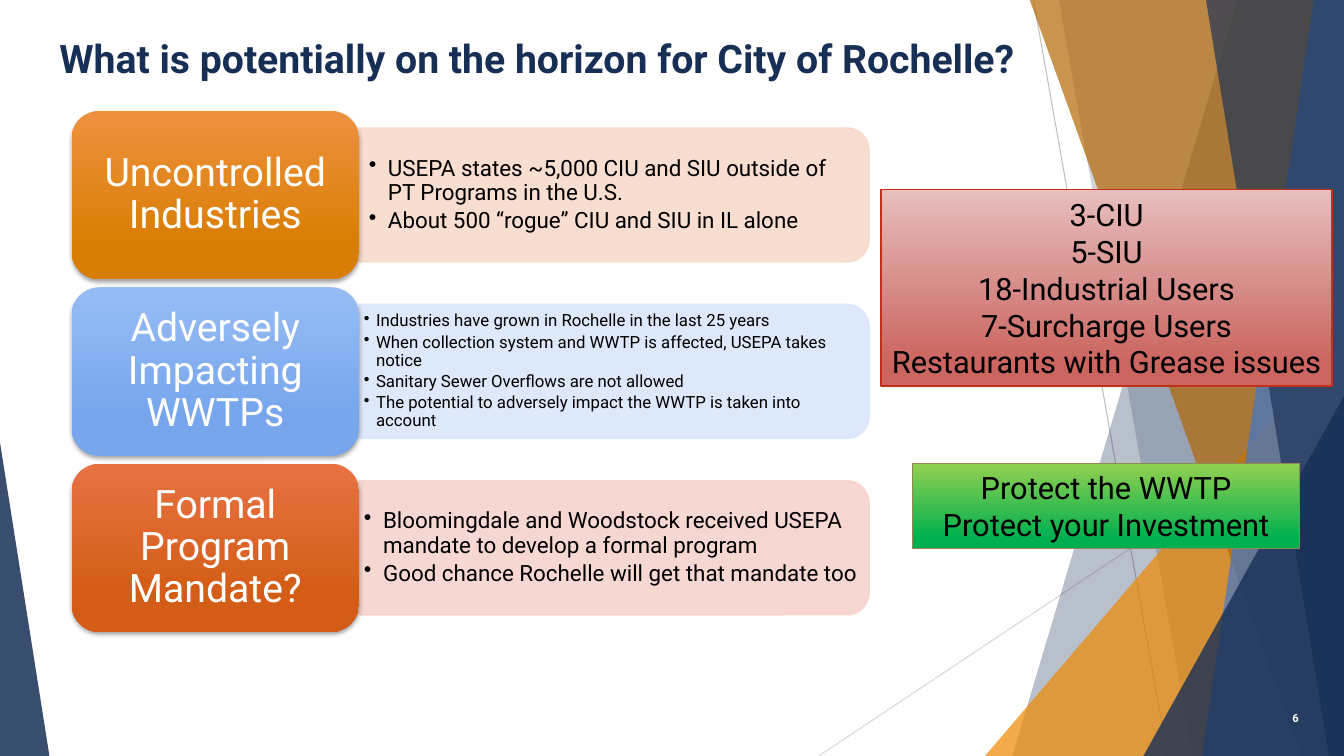
from dataclasses import dataclass

from lxml import etree
from pptx import Presentation
from pptx.dml.color import RGBColor
from pptx.enum import shapes, text
from pptx.oxml.ns import qn
from pptx.util import Inches, Pt

FONT = "Roboto"
NAVY = RGBColor(0x17, 0x2F, 0x55)
ORANGE = RGBColor(0xED, 0x8A, 0x05)
BROWN = RGBColor(0xB2, 0x67, 0x04)
BLUE = RGBColor(0x41, 0x77, 0xCC)
WHITE = RGBColor(0xFF, 0xFF, 0xFF)
BLACK = RGBColor(0x00, 0x00, 0x00)
GRAY = RGBColor(0xBF, 0xBF, 0xBF)
LIGHT_GRAY = RGBColor(0xD9, 0xD9, 0xD9)
AMBER_TOP, AMBER_BASE = RGBColor(0xEE, 0x91, 0x3F), RGBColor(0xD9, 0x7E, 0x05)
SKY_TOP, SKY_BASE = RGBColor(0x96, 0xBC, 0xF5), RGBColor(0x77, 0xA6, 0xEC)
RUST_TOP, RUST_BASE = RGBColor(0xE8, 0x72, 0x42), RGBColor(0xD3, 0x5D, 0x16)
PEACH = RGBColor(0xF8, 0xDA, 0xCC)
PALE_BLUE = RGBColor(0xDB, 0xE6, 0xFB)
PALE_RUST = RGBColor(0xF6, 0xD3, 0xCC)
ROSE_TOP, ROSE_BASE = RGBColor(0xE6, 0xBF, 0xBE), RGBColor(0xCB, 0x65, 0x60)
GREEN_TOP, GREEN_BASE = RGBColor(0x92, 0xD0, 0x50), RGBColor(0x00, 0xB0, 0x50)
RED_EDGE = RGBColor(0xC4, 0x2F, 0x1A)
OLIVE_EDGE = RGBColor(0x91, 0x86, 0x55)

SLIDE_W, SLIDE_H = 13.33, 7.5
ROW_TOP, ROW_PITCH = 1.10, 1.75
CARD_LEFT, CARD_W, CARD_H = 0.71, 2.85, 1.67
PANEL_W, PANEL_H = 5.06, 1.33
BULLETS_W, BULLETS_H = 5.0, 1.2


@dataclass
class Facet:
    """Band reaching the right edge, given by its left side."""
    top_x: float
    bottom_x: float
    color: RGBColor
    opacity: int


@dataclass
class Corner:
    """Triangle standing on the bottom edge."""
    left: float
    top: float
    width: float
    apex: float
    color: RGBColor
    opacity: int


@dataclass
class Topic:
    label: str
    bullets: list[str]
    size: int
    indent: float
    insets: tuple[float, float]
    top_color: RGBColor
    base_color: RGBColor
    panel_color: RGBColor


@dataclass
class Callout:
    box: tuple[float, float, float, float]
    lines: list[str]
    top_color: RGBColor
    base_color: RGBColor
    edge: RGBColor


BACKDROP = [
    Facet(12.28, 10.04, NAVY, 30),
    Facet(10.5, 11.83, NAVY, 20),
    Corner(9.77, 3.33, 3.56, 1, ORANGE, 72),
    Facet(10.21, 12.91, BROWN, 70),
    Facet(13.03, 11.92, BLUE, 70),
    Facet(11.96, 13.18, NAVY, 65),
    Corner(11.34, 3.93, 1.99, 1, NAVY, 80),
    Corner(0, 4.39, 0.49, 0, NAVY, 85),
]
TOPICS = [
    Topic("Uncontrolled Industries",
          ["USEPA states ~5,000 CIU and SIU outside of PT Programs in the U.S.",
           "About 500 “rogue” CIU and SIU in IL alone"],
          16, 0.19, (0.1, 0.05), AMBER_TOP, AMBER_BASE, PEACH),
    Topic("Adversely Impacting WWTPs",
          ["Industries have grown in Rochelle in the last 25 years",
           "When collection system and WWTP is affected, USEPA takes notice",
           "Sanitary Sewer Overflows are not allowed",
           "The potential to adversely impact the WWTP is taken into account"],
          12, 0.12, (0.05, 0.03), SKY_TOP, SKY_BASE, PALE_BLUE),
    Topic("Formal Program Mandate?",
          ["Bloomingdale and Woodstock received USEPA mandate to develop a formal program",
           "Good chance Rochelle will get that mandate too"],
          16, 0.19, (0.05, 0.03), RUST_TOP, RUST_BASE, PALE_RUST),
]
CALLOUTS = [
    Callout((8.74, 1.88, 4.47, 1.95),
            ["3-CIU", "5-SIU", "18-Industrial Users", "7-Surcharge Users",
             "Restaurants with Grease issues"], ROSE_TOP, ROSE_BASE, RED_EDGE),
    Callout((9.05, 4.6, 3.84, 0.84),
            ["Protect the WWTP", "Protect your Investment"],
            GREEN_TOP, GREEN_BASE, OLIVE_EDGE),
]


def paint(shape, color: RGBColor, opacity: int, outlined: bool = False) -> None:
    shape.shadow.inherit = False
    shape.fill.solid()
    shape.fill.fore_color.rgb = color
    if outlined:
        shape.line.color.rgb = color
        shape.line.width = Pt(1)
    else:
        shape.line.fill.background()
    for rgb in shape._element.spPr.iter(qn("a:srgbClr")):
        etree.SubElement(rgb, qn("a:alpha"), val=str(opacity * 1000))


def shade_down(shape, top_color: RGBColor, base_color: RGBColor, base_at: float) -> None:
    """Fill with a gradient running from top to bottom."""
    shape.shadow.inherit = False
    shape.fill.gradient()
    shape.fill.gradient_angle = 270
    stops = zip(shape.fill.gradient_stops, (top_color, base_color), (0, base_at))
    for stop, color, position in stops:
        stop.color.rgb = color
        stop.position = position


def drop_shadow(shape) -> None:
    effects = shape._element.spPr.find(qn("a:effectLst"))
    shadow = etree.SubElement(effects, qn("a:outerShdw"), blurRad=str(Pt(3)),
                              dist=str(Pt(2)), dir="5400000", rotWithShape="0")
    rgb = etree.SubElement(shadow, qn("a:srgbClr"), val="000000")
    etree.SubElement(rgb, qn("a:alpha"), val="35000")


def set_insets(frame, side: float, end: float) -> None:
    frame.margin_left = frame.margin_right = Inches(side)
    frame.margin_top = frame.margin_bottom = Inches(end)


def write(frame, lines: list[str], size: int, color: RGBColor,
          align=text.PP_ALIGN.LEFT, bold: bool = False) -> None:
    for i, line in enumerate(lines):
        paragraph = frame.add_paragraph() if i else frame.paragraphs[0]
        paragraph.alignment = align
        run = paragraph.add_run()
        run.text = line
        run.font.name, run.font.size, run.font.bold = FONT, Pt(size), bold
        run.font.color.rgb = color


def add_text_box(slide, left: float, top: float, width: float, height: float,
                 anchor=text.MSO_ANCHOR.MIDDLE):
    frame = slide.shapes.add_textbox(*map(Inches, (left, top, width, height))).text_frame
    frame.word_wrap = True
    frame.vertical_anchor = anchor
    return frame


def add_shape(slide, preset, left: float, top: float, width: float, height: float):
    return slide.shapes.add_shape(preset, *map(Inches, (left, top, width, height)))


def draw_ray(slide, start: tuple[float, float], end: tuple[float, float],
             color: RGBColor) -> None:
    ray = slide.shapes.add_connector(shapes.MSO_CONNECTOR.STRAIGHT,
                                     *map(Inches, start + end))
    ray.line.color.rgb = color
    ray.line.width = Pt(0.75)
    etree.SubElement(ray._element.spPr, qn("a:effectLst"))


def draw_facet(slide, facet: Facet) -> None:
    top = Inches(-0.01)
    right, bottom = Inches(SLIDE_W), Inches(SLIDE_H)
    outline = slide.shapes.build_freeform(Inches(facet.top_x), top)
    outline.add_line_segments([(right, top), (right, bottom),
                               (Inches(facet.bottom_x), bottom)])
    paint(outline.convert_to_shape(), facet.color, facet.opacity)


def draw_corner(slide, corner: Corner) -> None:
    triangle = add_shape(slide, shapes.MSO_SHAPE.ISOSCELES_TRIANGLE, corner.left,
                         corner.top, corner.width, SLIDE_H - corner.top)
    triangle.adjustments[0] = corner.apex
    paint(triangle, corner.color, corner.opacity)


def draw_topic(slide, topic: Topic, row: int) -> None:
    top = ROW_TOP + row * ROW_PITCH
    middle = top + CARD_H / 2
    card_right = CARD_LEFT + CARD_W
    panel = add_shape(slide, shapes.MSO_SHAPE.ROUND_2_SAME_RECTANGLE,
                      card_right + (PANEL_W - PANEL_H) / 2, middle - PANEL_W / 2,
                      PANEL_H, PANEL_W)
    panel.rotation = 90
    paint(panel, topic.panel_color, 90, outlined=True)

    details = add_text_box(slide, card_right, middle - BULLETS_H / 2, BULLETS_W, BULLETS_H)
    set_insets(details, *topic.insets)
    write(details, topic.bullets, topic.size, BLACK)
    for paragraph in details.paragraphs:
        paragraph.level = 1
        paragraph.line_spacing = 0.9
        paragraph.space_after = Pt(round(topic.size * 0.18, 1))
        properties = paragraph._p.get_or_add_pPr()
        properties.set("marL", str(Inches(topic.indent)))
        properties.set("indent", str(-Inches(topic.indent)))
        etree.SubElement(properties, qn("a:buChar"), char="•")

    card = add_shape(slide, shapes.MSO_SHAPE.ROUNDED_RECTANGLE,
                     CARD_LEFT, top, CARD_W, CARD_H)
    shade_down(card, topic.top_color, topic.base_color, 0.78)
    card.line.fill.background()
    drop_shadow(card)
    set_insets(card.text_frame, 0.12, 0.06)
    write(card.text_frame, [topic.label], 28, WHITE, text.PP_ALIGN.CENTER)
    card.text_frame.paragraphs[0].line_spacing = 0.9


def draw_callout(slide, callout: Callout) -> None:
    box = add_shape(slide, shapes.MSO_SHAPE.RECTANGLE, *callout.box)
    shade_down(box, callout.top_color, callout.base_color, 0.88)
    box.line.color.rgb = callout.edge
    box.line.width = Pt(1)
    box.text_frame.word_wrap = False
    write(box.text_frame, callout.lines, 22, BLACK, text.PP_ALIGN.CENTER)


def main() -> None:
    deck = Presentation()
    deck.slide_width, deck.slide_height = Inches(SLIDE_W), Inches(SLIDE_H)
    slide = deck.slides.add_slide(deck.slide_layouts[6])
    draw_ray(slide, (10.25, 0), (11.58, SLIDE_H), GRAY)
    draw_ray(slide, (SLIDE_W, 4.03), (8.12, SLIDE_H), LIGHT_GRAY)
    for piece in BACKDROP:
        if isinstance(piece, Facet):
            draw_facet(slide, piece)
        else:
            draw_corner(slide, piece)
    for row, topic in enumerate(TOPICS):
        draw_topic(slide, topic, row)
    title = add_text_box(slide, 0.49, 0.29, 10.28, 0.5, text.MSO_ANCHOR.TOP)
    write(title, ["What is potentially on the horizon for City of Rochelle?"],
          28, NAVY, bold=True)
    page_number = add_text_box(slide, 12.23, 6.92, 0.75, 0.4)
    write(page_number, ["6"], 8, WHITE, text.PP_ALIGN.RIGHT, bold=True)
    for callout in CALLOUTS:
        draw_callout(slide, callout)
    deck.save("out.pptx")


if __name__ == "__main__":
    main()
